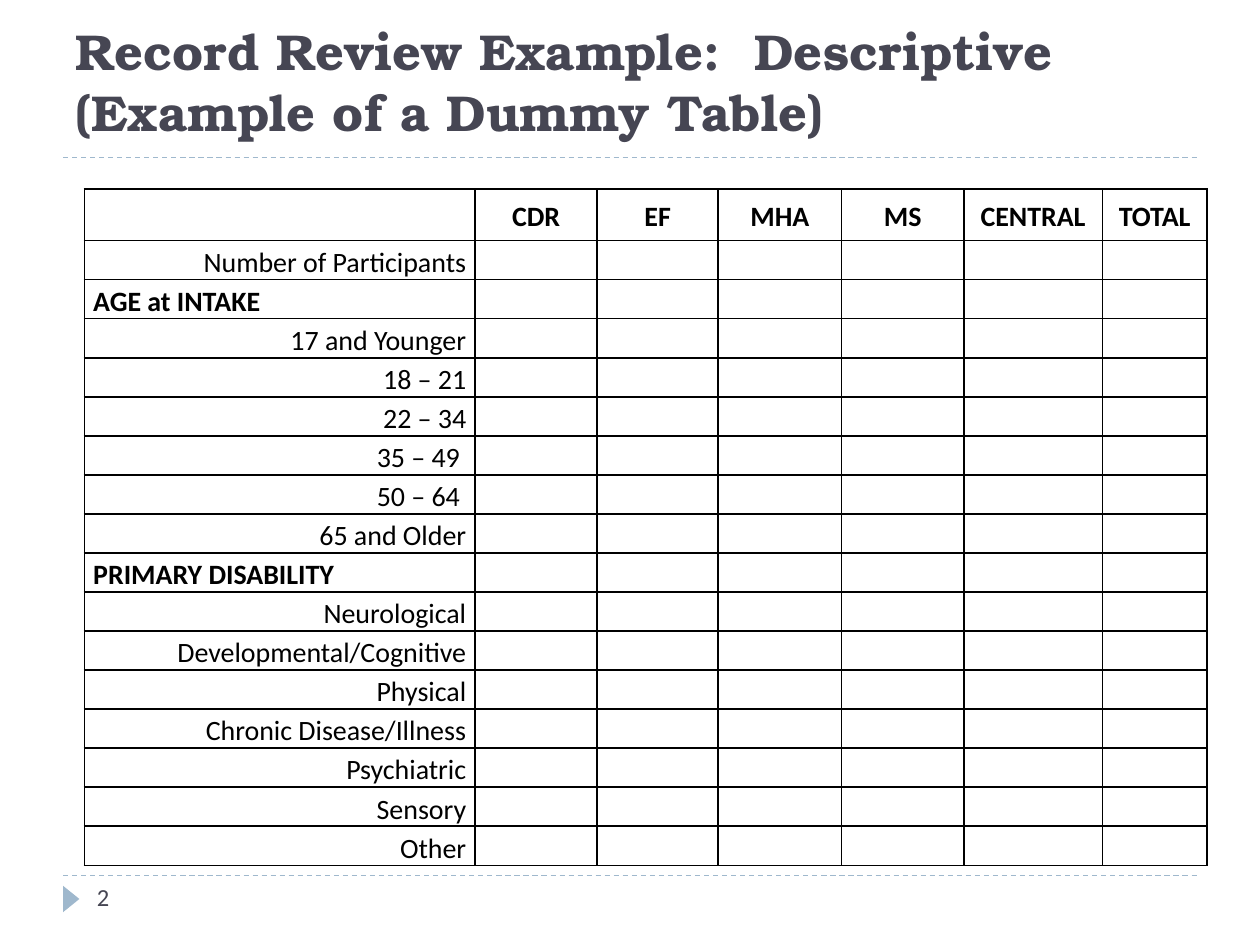
from lxml.etree import SubElement
from pptx import Presentation
from pptx.dml.color import RGBColor
from pptx.enum.dml import MSO_LINE
from pptx.enum.shapes import MSO_CONNECTOR as Connector, MSO_SHAPE as Shape
from pptx.enum.text import MSO_ANCHOR as Anchor, PP_ALIGN as Align
from pptx.oxml.ns import qn
from pptx.util import Inches, Pt

WIDTH, HEIGHT = 10, 7.5
MARGIN = 0.05 * WIDTH
INK, ACCENT, BLACK = "464653", "9FB8CD", "000000"
TITLE_FONT, BODY_FONT = "TeX Gyre Bonum", "Calibri"
BODY_SIZE = 16
COLUMN_WIDTHS = [3.1, 0.97, 0.96, 0.98, 0.97, 1.1, 0.83]
HEADER_HEIGHT, ROW_HEIGHT = 0.41, 0.31
HEADINGS = ["", "CDR", "EF", "MHA", "MS", "CENTRAL", "TOTAL"]
SECTIONS = ["AGE at INTAKE", "PRIMARY DISABILITY"]
LABELS = [
    "Number of Participants",
    SECTIONS[0],
    "17 and Younger", "18 – 21", "22 – 34", "35 – 49 ", "50 – 64 ", "65 and Older",
    SECTIONS[1],
    "Neurological", "Developmental/Cognitive", "Physical",
    "Chronic Disease/Illness", "Psychiatric", "Sensory", "Other",
]


def color(value):
    return RGBColor.from_string(value)


def add_span(para, text, size, font, ink, bold=False):
    span = para.add_run()
    span.text = text
    span.font.size = Pt(size)
    span.font.name = font
    span.font.bold = bold
    span.font.color.rgb = color(ink)


def add_text(page, area, text, size, font, bold=False, anchor=Anchor.TOP):
    box = page.shapes.add_textbox(*map(Inches, area))
    frame = box.text_frame
    frame.word_wrap = True
    frame.vertical_anchor = anchor
    add_span(frame.paragraphs[0], text, size, font, INK, bold)


def add_rule(page, top):
    rule = page.shapes.add_connector(
        Connector.STRAIGHT, Inches(MARGIN), Inches(top), Inches(WIDTH - MARGIN), Inches(top))
    rule.line.color.rgb = color(ACCENT)
    rule.line.width = Pt(0.75)
    rule.line.dash_style = MSO_LINE.DASH
    SubElement(rule._element.spPr, qn("a:effectLst"))


def add_marker(page):
    marker = page.shapes.add_shape(
        Shape.ISOSCELES_TRIANGLE, *map(Inches, (0.46, 7.07, 0.21, 0.13)))
    marker.rotation = 90
    marker.shadow.inherit = False
    marker.fill.solid()
    marker.fill.fore_color.rgb = color(ACCENT)
    marker.line.fill.background()


def set_borders(cell):
    properties = cell._tc.get_or_add_tcPr()
    for side in ("lnL", "lnR", "lnT", "lnB"):
        line = SubElement(properties, qn(f"a:{side}"), w=str(Pt(1)))
        fill = SubElement(line, qn("a:solidFill"))
        SubElement(fill, qn("a:srgbClr"), val=BLACK)


def fill_cell(cell, text, align, bold):
    set_borders(cell)
    cell.fill.background()
    cell.vertical_anchor = Anchor.MIDDLE
    cell.margin_left = cell.margin_right = Inches(0.07)
    cell.margin_top = cell.margin_bottom = 0
    para = cell.text_frame.paragraphs[0]
    para.alignment = align
    para.line_spacing = 1.15
    if text:
        add_span(para, text, BODY_SIZE, BODY_FONT, BLACK, bold)
    else:
        SubElement(para._p, qn("a:endParaRPr"), sz=str(BODY_SIZE * 100))


def add_review_table(page):
    rows = [HEADINGS] + [[label] + [""] * (len(HEADINGS) - 1) for label in LABELS]
    heights = [HEADER_HEIGHT] + [ROW_HEIGHT] * len(LABELS)
    area = (0.67, 1.5, sum(COLUMN_WIDTHS), sum(heights))
    table = page.shapes.add_table(len(rows), len(HEADINGS), *map(Inches, area)).table
    table.first_row = table.horz_banding = False
    for column, width in zip(table.columns, COLUMN_WIDTHS):
        column.width = Inches(width)
    for row, height, texts in zip(table.rows, heights, rows):
        row.height = Inches(height)
        for cell, text in zip(row.cells, texts):
            if texts is HEADINGS:
                align = Align.CENTER
            else:
                align = Align.LEFT if text in SECTIONS else Align.RIGHT
            fill_cell(cell, text, align, bold=align != Align.RIGHT)


def main():
    deck = Presentation()
    deck.slide_width, deck.slide_height = Inches(WIDTH), Inches(HEIGHT)
    page = deck.slides.add_slide(deck.slide_layouts[6])
    for top in (6.95, 1.25):
        add_rule(page, top)
    add_marker(page)
    add_text(page, (MARGIN, 0.3, WIDTH - 2 * MARGIN, 0.87),
             "Record Review Example:  Descriptive (Example of a Dummy Table)",
             28.8, TITLE_FONT, bold=True, anchor=Anchor.BOTTOM)
    add_review_table(page)
    add_text(page, (0.67, 6.95, 2.17, 0.4), "2", 14, BODY_FONT)
    deck.save("out.pptx")


if __name__ == "__main__":
    main()
